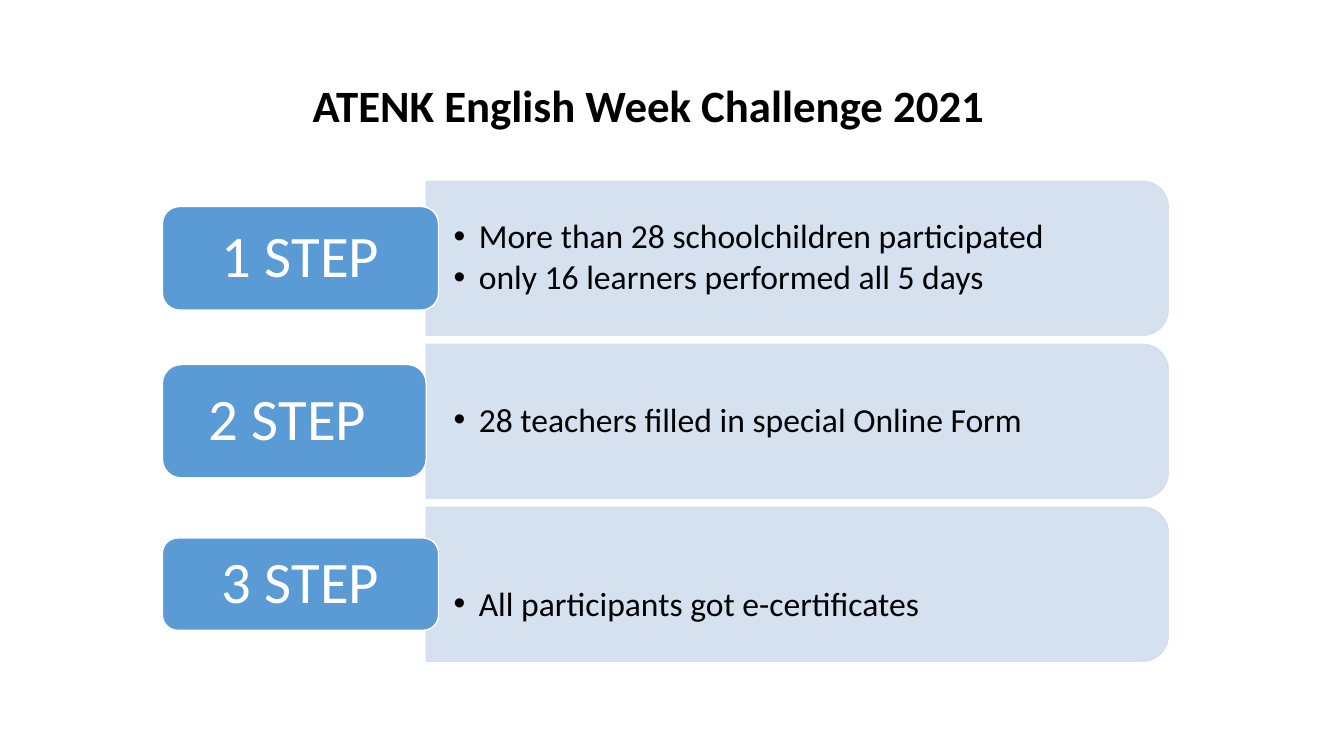
from lxml import etree
from pptx import Presentation
from pptx.dml.color import RGBColor
from pptx.enum.shapes import MSO_SHAPE
from pptx.enum.text import MSO_ANCHOR, MSO_AUTO_SIZE, PP_ALIGN
from pptx.oxml.ns import qn
from pptx.util import Pt

ROUND = MSO_SHAPE.ROUNDED_RECTANGLE
PANEL = MSO_SHAPE.ROUND_2_SAME_RECTANGLE
MIDDLE = MSO_ANCHOR.MIDDLE
CENTER, LEFT = PP_ALIGN.CENTER, PP_ALIGN.LEFT
NO_FIT = MSO_AUTO_SIZE.NONE

COLORS = {"panel": "D2DEEF", "tab": "5B9BD5", "white": "FFFFFF", "black": "000000"}
FONT = "Calibri"

COMPARISON = 4
TAB_X, PANEL_X = 116, 304.5
PANEL_W, PANEL_H = 530, 110
TOP, PITCH = 129.5, 116.4
INSET, INDENT = 19.5, 18

# label, tab width, tab height, list placeholder, list drop, items
STEPS = [
    ("1 STEP", 197.3, 74, 1, 0, ["More than 28 schoolchildren participated",
                                 "only 16 learners performed all 5 days"]),
    ("2 STEP ", 188.5, 81, 2, 0, ["28 teachers filled in special Online Form"]),
    ("3 STEP", 197.3, 66, 4, 15, ["All participants got e-certificates"]),
]


def color(name):
    return RGBColor.from_string(COLORS[name])


def place(shape, x, y, w, h):
    shape.left, shape.top, shape.width, shape.height = Pt(x), Pt(y), Pt(w), Pt(h)


def set_frame(frame, side, wrap=True):
    frame.auto_size = NO_FIT
    frame.word_wrap = wrap
    frame.vertical_anchor = MIDDLE
    frame.margin_left = frame.margin_right = Pt(side)
    frame.margin_top = frame.margin_bottom = 0


def add_text(para, text, size, tone, align, bold=False):
    para.alignment = align
    run = para.add_run()
    run.text = text
    font = run.font
    font.name, font.size, font.bold = FONT, Pt(size), bold
    font.color.rgb = color(tone)


def add_bullet(para):
    props = para._p.get_or_add_pPr()
    props.set("marL", str(Pt(INDENT)))
    props.set("indent", str(-Pt(INDENT)))
    etree.SubElement(props, qn("a:buFont"), typeface="Arial")
    etree.SubElement(props, qn("a:buChar"), char="•")


def add_box(slide, kind, fill, line, x, y, w, h):
    shape = slide.shapes.add_shape(kind, Pt(x), Pt(y), Pt(w), Pt(h))
    shape.shadow.inherit = False
    shape.fill.solid()
    shape.fill.fore_color.rgb = color(fill)
    shape.line.color.rgb = color(line)
    shape.line.width = Pt(1)
    return shape


def add_panel(slide, x, y, w, h):
    """Draw an upright shape turned a quarter, so its round corners face right."""
    panel = add_box(slide, PANEL, "panel", "panel",
                    x + (w - h) / 2, y + (h - w) / 2, h, w)
    panel.rotation = 90
    for tone in panel._element.spPr.iter(qn("a:srgbClr")):
        etree.SubElement(tone, qn("a:alpha"), val="90000")


def add_tab(slide, label, x, y, w, h):
    tab = add_box(slide, ROUND, "tab", "white", x, y, w, h)
    set_frame(tab.text_frame, 12)
    para = tab.text_frame.paragraphs[0]
    para.line_spacing = 0.9
    add_text(para, label, 42, "white", CENTER)


def fill_list(slide, body, items, x, y, w, h):
    slide.shapes._spTree.append(body._element)  # bring in front of the panel
    place(body, x, y, w, h)
    frame = body.text_frame
    set_frame(frame, INSET)
    for i, item in enumerate(items):
        para = frame.add_paragraph() if i else frame.paragraphs[0]
        para.line_spacing = 0.9
        para.space_before, para.space_after = Pt(0), Pt(3)
        add_bullet(para)
        add_text(para, item, 24, "black", LEFT)


def add_step(slide, step, x, y, w, h):
    label, tab_w, tab_h, slot, drop, items = step
    add_panel(slide, x, y, w, h)
    fill_list(slide, slide.placeholders[slot], items, x, y + drop, w, h)
    add_tab(slide, label, TAB_X, y + (h - tab_h) / 2, tab_w, tab_h)


def fill_title(title, x, y, w, h):
    place(title, x, y, w, h)
    set_frame(title.text_frame, 7.2, wrap=False)
    add_text(title.text_frame.paragraphs[0], "ATENK English Week Challenge 2021 ",
             32, "black", CENTER, bold=True)


def main():
    deck = Presentation()
    deck.slide_width, deck.slide_height = Pt(960), Pt(540)
    slide = deck.slides.add_slide(deck.slide_layouts[COMPARISON])
    fill_title(slide.shapes.title, 214, 52, 506, 46)
    for i, step in enumerate(STEPS):
        add_step(slide, step, PANEL_X, TOP + i * PITCH, PANEL_W, PANEL_H)
    spare = slide.placeholders[3]._element
    spare.getparent().remove(spare)
    deck.save("out.pptx")


if __name__ == "__main__":
    main()
